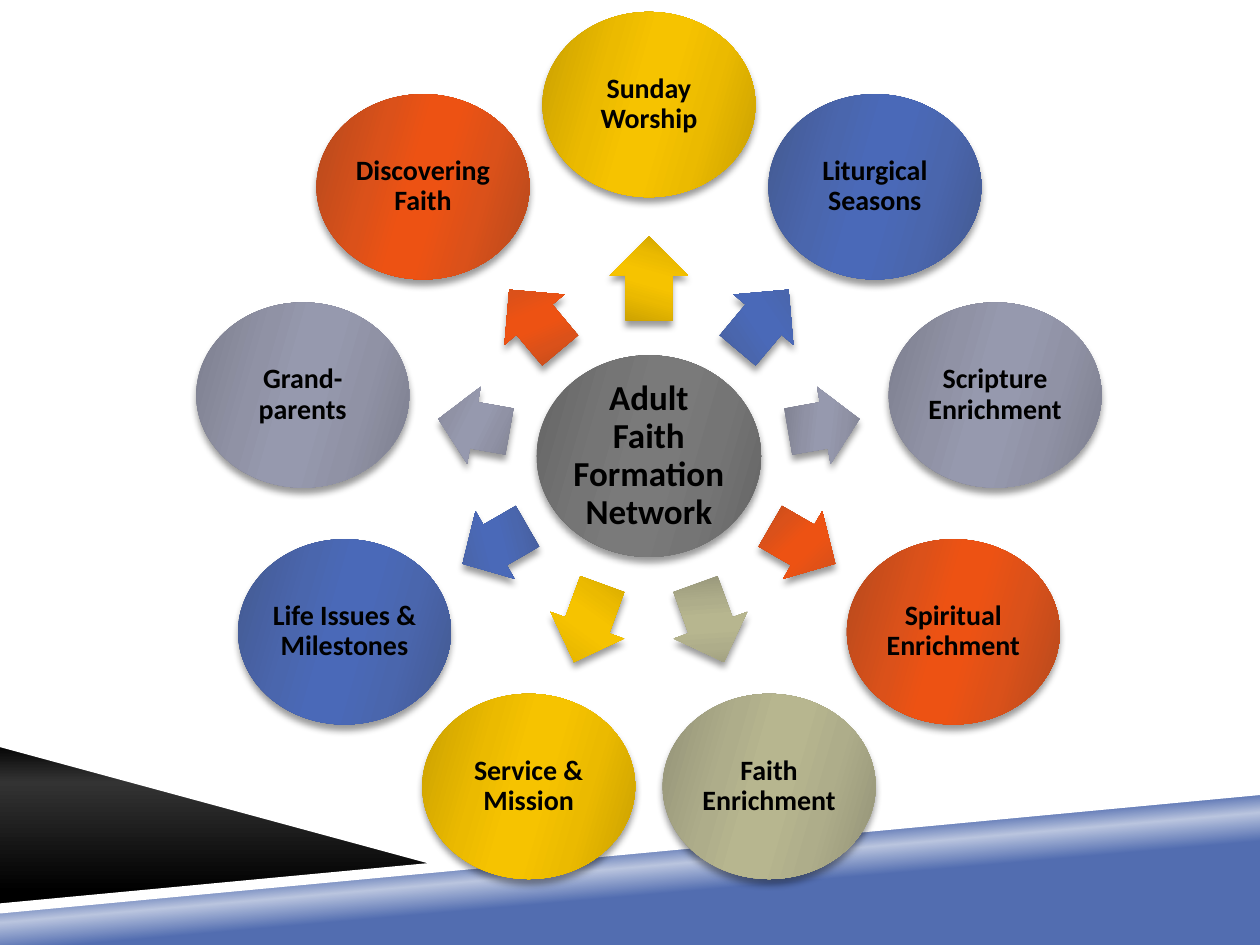
from math import cos, radians, sin

from lxml.etree import SubElement
from pptx import Presentation
from pptx.dml.color import RGBColor
from pptx.enum.shapes import MSO_SHAPE
from pptx.enum.text import MSO_ANCHOR, PP_ALIGN
from pptx.oxml.ns import qn
from pptx.util import Inches, Pt

COLS, ROWS = 10, 7.5
UNIT = Inches(1)
HUB = (5.15, 3.62)
ORBIT, REACH = 2.79, 1.41

BLACK = RGBColor(0, 0, 0)
WHITE = RGBColor(255, 255, 255)
COAL = RGBColor(0x33, 0x33, 0x33)
NAVY = RGBColor(0x52, 0x6D, 0xB0)
SKY = RGBColor(0xBA, 0xC5, 0xDF)
GRAY = (RGBColor(0x64, 0x64, 0x64), RGBColor(0x75, 0x75, 0x75), RGBColor(0x7A, 0x7A, 0x7A))
GOLD = (RGBColor(0xC8, 0x9F, 0x01), RGBColor(0xEB, 0xBA, 0x00), RGBColor(0xF6, 0xC3, 0x00))
BLUE = (RGBColor(0x43, 0x59, 0x90), RGBColor(0x4A, 0x66, 0xAD), RGBColor(0x4A, 0x69, 0xB8))
SLATE = (RGBColor(0x7C, 0x7E, 0x8D), RGBColor(0x90, 0x92, 0xA5), RGBColor(0x96, 0x99, 0xAE))
RUST = (RGBColor(0xB4, 0x49, 0x1D), RGBColor(0xDB, 0x51, 0x1A), RGBColor(0xED, 0x52, 0x13))
SAGE = (RGBColor(0x93, 0x92, 0x77), RGBColor(0xAE, 0xAD, 0x8A), RGBColor(0xB7, 0xB6, 0x8F))

TOPICS = [
    ("Sunday Worship", GOLD),
    ("Liturgical Seasons", BLUE),
    ("Scripture Enrichment", SLATE),
    ("Spiritual Enrichment", RUST),
    ("Faith Enrichment", SAGE),
    ("Service & Mission", GOLD),
    ("Life Issues & Milestones", BLUE),
    ("Grand-parents", SLATE),
    ("Discovering Faith", RUST),
]

BANDS = [
    ([(0, 7.21), (10, 6.27), (10, 7.5), (0, 7.5)], [(39, NAVY), (50, SKY), (58, NAVY)], 265),
    ([(0, 5.89), (3.59, 6.85), (0, 7.21)], [(0, BLACK), (24, COAL), (90, BLACK)], 90),
    ([(10, 6.23), (0, 7.17), (0, 7.25), (10, 6.31)], None, 0),
    ([(0, 5.85), (0, 5.93), (3.5, 6.88), (3.75, 6.86)], None, 0),
]


def grid(count):
    """Turn a count of grid units into a length."""
    return round(count * UNIT)


def tint(parent, color):
    """Add a colour element to a parent and return it."""
    return SubElement(parent, qn("a:srgbClr"), val=str(color))


def blend(shape, stops, angle):
    """Fill a shape with a linear gradient, its angle clockwise."""
    shape.fill.gradient()
    grad = shape._element.spPr.find(qn("a:gradFill"))
    for child in list(grad):
        grad.remove(child)
    row = SubElement(grad, qn("a:gsLst"))
    for place, color in stops:
        tint(SubElement(row, qn("a:gs"), pos=str(place * 1000)), color)
    SubElement(grad, qn("a:lin"), ang=str(angle * 60000), scaled="0")


def shade(shape):
    """Give a shape a soft shadow below it."""
    shape.shadow.inherit = False
    effects = shape._element.spPr.find(qn("a:effectLst"))
    drop = SubElement(effects, qn("a:outerShdw"), blurRad=str(Pt(4)), dist=str(Pt(3.3)),
                      dir="5400000", rotWithShape="0")
    SubElement(tint(drop, BLACK), qn("a:alpha"), val="40000")


def band(slide, points, stops, angle):
    """Draw one flat band of the backdrop."""
    first, *rest = [(grid(x), grid(y)) for x, y in points]
    pen = slide.shapes.build_freeform(*first)
    pen.add_line_segments(rest, close=True)
    shape = pen.convert_to_shape()
    shape.shadow.inherit = False
    shape.line.fill.background()
    if stops:
        blend(shape, stops, angle)
    else:
        shape.fill.solid()
        shape.fill.fore_color.rgb = WHITE


def piece(slide, kind, mid, size, tones):
    """Place a glossy shape around its middle."""
    x, y = mid
    wide, high = size
    shape = slide.shapes.add_shape(kind, grid(x - wide / 2), grid(y - high / 2),
                                   grid(wide), grid(high))
    edge, half, core = tones
    blend(shape, [(0, edge), (30, half), (45, core), (55, core), (73, half), (100, edge)], 16)
    shape.line.fill.background()
    shade(shape)
    return shape


def bubble(slide, text, mid, size, tones, points, inset):
    """Draw an ellipse with bold centred text."""
    frame = piece(slide, MSO_SHAPE.OVAL, mid, size, tones).text_frame
    frame.text = text
    frame.word_wrap = True
    frame.vertical_anchor = MSO_ANCHOR.MIDDLE
    frame.margin_left = frame.margin_right = grid(inset)
    frame.margin_top = frame.margin_bottom = grid(inset)
    para = frame.paragraphs[0]
    para.alignment = PP_ALIGN.CENTER
    para.line_spacing = 0.9
    para.space_after = Pt(0.35 * points)
    font = para.runs[0].font
    font.name, font.size, font.bold = "Calibri", Pt(points), True
    font.color.rgb = BLACK


def arrow(slide, mid, angle, tones):
    """Draw an outward arrow, longer as it turns upright."""
    size = (0.57 + 0.1 * sin(radians(angle)) ** 2, 0.62)
    shape = piece(slide, MSO_SHAPE.RIGHT_ARROW, mid, size, tones)
    shape.adjustments[0] = 0.6
    shape.adjustments[1] = 0.5
    shape.rotation = angle


def spot(radius, angle):
    """Find the point at a radius and angle from the hub."""
    turn = radians(angle)
    return HUB[0] + radius * cos(turn), HUB[1] + radius * sin(turn)


def main():
    """Build the slide and save it."""
    deck = Presentation()
    deck.slide_width, deck.slide_height = grid(COLS), grid(ROWS)
    slide = deck.slides.add_slide(deck.slide_layouts[6])
    for points, stops, angle in BANDS:
        band(slide, points, stops, angle)
    bubble(slide, "Adult Faith Formation Network", HUB, (1.78, 1.6), GRAY, 20, 0.03)
    for index, (text, tones) in enumerate(TOPICS):
        angle = (270 + index * 360 / len(TOPICS)) % 360
        arrow(slide, spot(REACH, angle), angle, tones)
        bubble(slide, text, spot(ORBIT, angle), (1.69, 1.47), tones, 16, 0.02)
    deck.save("out.pptx")


if __name__ == "__main__":
    main()
